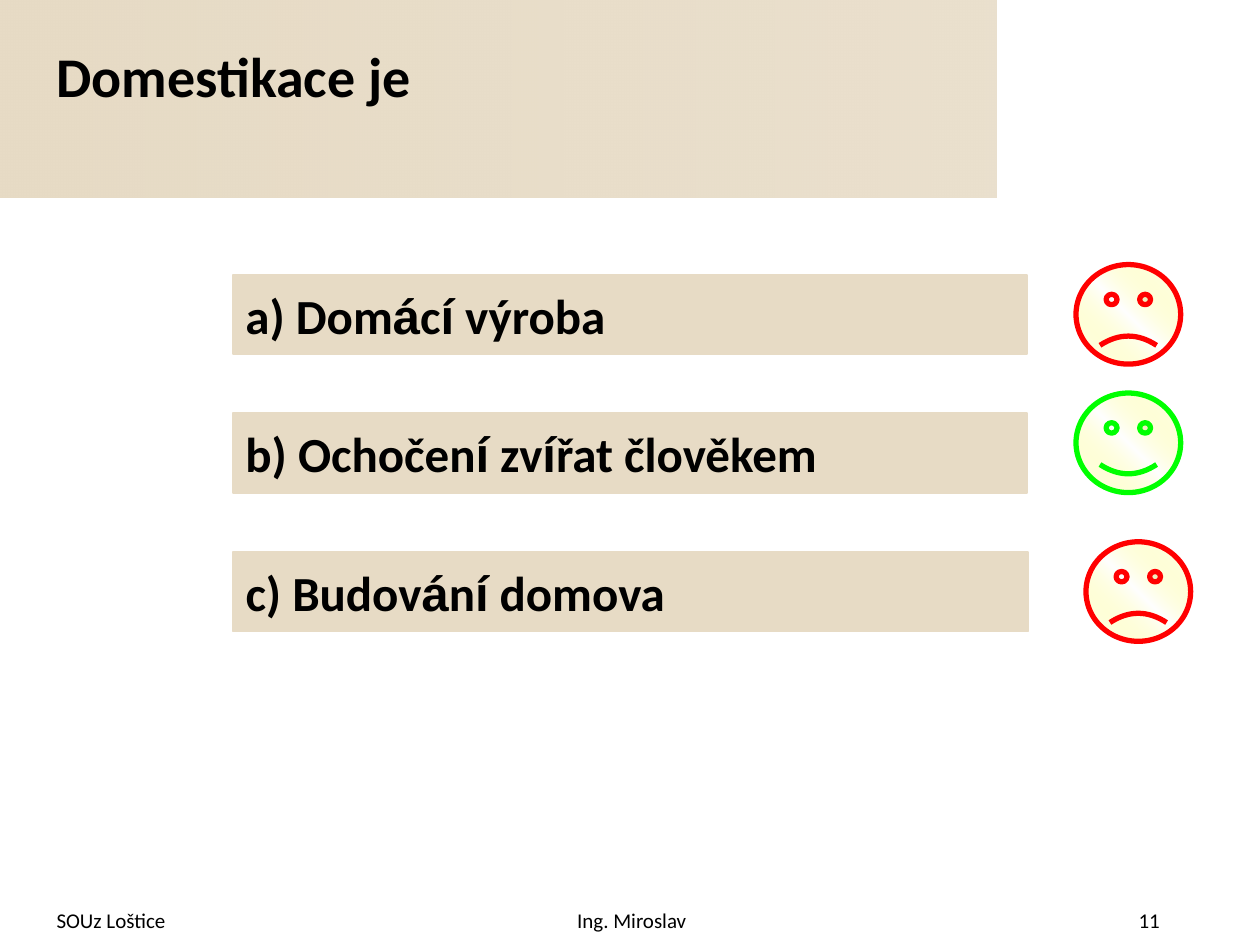
from dataclasses import dataclass
from itertools import groupby

from lxml.etree import SubElement
from pptx import Presentation
from pptx.dml.color import RGBColor as Rgb
from pptx.enum.shapes import MSO_SHAPE as Kind
from pptx.enum.text import MSO_ANCHOR as Anchor, PP_ALIGN as Align
from pptx.oxml.ns import qn
from pptx.util import Pt


@dataclass(frozen=True)
class Theme:
    sand: str = "E7DBC5"
    ink: str = "000000"
    white: str = "FFFFFF"
    glow: str = "FFFF66"
    good: str = "00FF00"
    bad: str = "FF0000"
    font: str = "Calibri"
    accent: str = "Arial"
    title: int = 32
    answer: int = 28
    foot: int = 12


@dataclass(frozen=True)
class Box:
    left: float
    top: float
    width: float
    height: float

    def place(self) -> tuple:
        return Pt(self.left), Pt(self.top), Pt(self.width), Pt(self.height)


@dataclass(frozen=True)
class Stop:
    pos: int
    color: str
    alpha: int = 100


@dataclass(frozen=True)
class Answer:
    text: str
    right: bool
    width: float
    face: tuple[float, float]


@dataclass(frozen=True)
class Foot:
    text: str
    left: float
    width: float
    align: Align


THEME = Theme()
ANSWERS = [
    Answer("a) Domácí výroba", False, 453.6, (614.9, 151.2)),
    Answer("b) Ochočení zvířat člověkem", True, 453.6, (614.9, 224.6)),
    Answer("c) Budování domova", False, 454.3, (620.6, 309.6)),
]
FEET = [
    Foot("SOUz Loštice", 25.2, 168, Align.LEFT),
    Foot("Ing. Miroslav", 247, 228, Align.CENTER),
    Foot("11", 501.8, 168, Align.RIGHT),
]


def style(font, size: int, bold: bool = False, name: str = THEME.font) -> None:
    font.name, font.size, font.bold = name, Pt(size), bold
    font.color.rgb = Rgb.from_string(THEME.ink)


def blend(shape, stops: list[Stop], angle: int) -> None:
    shape.fill.gradient()
    shape.fill.gradient_angle = angle
    group = next(shape.element.spPr.iter(qn("a:gsLst")))
    for old in list(group):
        group.remove(old)
    for stop in stops:
        node = SubElement(group, qn("a:gs"), pos=str(stop.pos * 1000))
        color = SubElement(node, qn("a:srgbClr"), val=stop.color)
        if stop.alpha < 100:
            SubElement(color, qn("a:alpha"), val=str(stop.alpha * 1000))


def add_shape(slide, kind: Kind, box: Box):
    shape = slide.shapes.add_shape(kind, *box.place())
    shape.shadow.inherit = False
    return shape


def add_line(shape, color: str, width: float) -> None:
    shape.line.color.rgb = Rgb.from_string(color)
    shape.line.width = Pt(width)


def add_text(slide, text: str, box: Box, size: int, bold: bool = False,
             align: Align = Align.LEFT, anchor: Anchor = Anchor.TOP) -> None:
    frame = slide.shapes.add_textbox(*box.place()).text_frame
    frame.word_wrap = True
    frame.vertical_anchor = anchor
    frame.text = text
    para = frame.paragraphs[0]
    para.alignment = align
    style(para.runs[0].font, size, bold)


def add_bar(slide, answer: Answer, top: float) -> None:
    bar = add_shape(slide, Kind.ACTION_BUTTON_CUSTOM,
                    Box(133.2, top, answer.width, 45.4))
    bar.fill.solid()
    bar.fill.fore_color.rgb = Rgb.from_string(THEME.sand)
    add_line(bar, THEME.sand, 1)
    frame = bar.text_frame
    frame.word_wrap = False
    frame.vertical_anchor = Anchor.MIDDLE
    para = frame.paragraphs[0]
    para.alignment = Align.LEFT
    # The letters á and í stand in the accent font
    for odd, chars in groupby(answer.text, lambda char: char in "áí"):
        run = para.add_run()
        run.text = "".join(chars)
        style(run.font, THEME.answer, True,
              THEME.accent if odd else THEME.font)


def add_face(slide, answer: Answer) -> None:
    face = add_shape(slide, Kind.SMILEY_FACE, Box(*answer.face, 59.8, 56.9))
    face.adjustments[0] = 0.047 if answer.right else -0.047
    blend(face, [Stop(0, THEME.white), Stop(50, THEME.glow, 0),
                 Stop(100, THEME.white)], 45)
    add_line(face, THEME.good if answer.right else THEME.bad, 3)


def main() -> None:
    deck = Presentation()
    deck.slide_width, deck.slide_height = Pt(720), Pt(540)
    slide = deck.slides.add_slide(deck.slide_layouts[6])

    # Header band and title
    band = add_shape(slide, Kind.RECTANGLE, Box(0, 0, 569.5, 113))
    blend(band, [Stop(0, THEME.sand), Stop(100, THEME.sand, 85)], 0)
    band.line.fill.background()
    add_text(slide, "Domestikace je", Box(25.2, 20.2, 516.2, 51.1),
             THEME.title, bold=True)

    # Answers with their faces
    for row, answer in enumerate(ANSWERS):
        add_bar(slide, answer, 157 + row * 79.2)
        add_face(slide, answer)

    # Footer
    for foot in FEET:
        add_text(slide, foot.text, Box(foot.left, 511.2, foot.width, 28.8),
                 THEME.foot, align=foot.align, anchor=Anchor.MIDDLE)

    deck.save("out.pptx")


if __name__ == "__main__":
    main()
